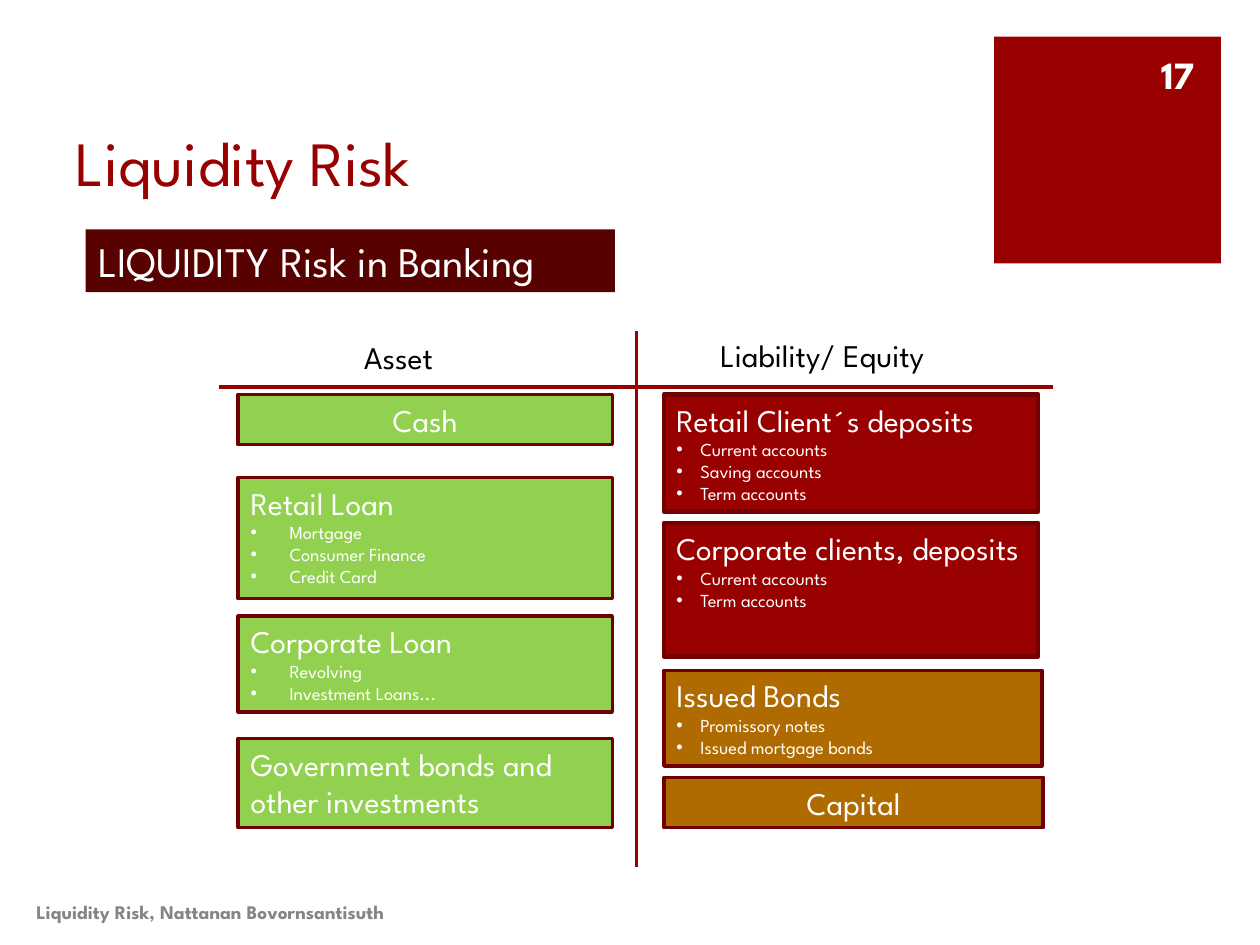
from lxml.etree import SubElement
from pptx import Presentation
from pptx.dml.color import RGBColor
from pptx.enum.shapes import MSO_CONNECTOR, MSO_SHAPE
from pptx.enum.text import MSO_ANCHOR, PP_ALIGN
from pptx.oxml.ns import qn
from pptx.util import Inches, Pt

HUES = {
    "red": "990000", "dark": "580101", "edge": "710000", "rim": "730000",
    "green": "92D050", "brown": "B06B00", "white": "FFFFFF",
    "black": "000000", "grey": "858585",
}
LEFT, RIGHT, MID = PP_ALIGN.LEFT, PP_ALIGN.RIGHT, PP_ALIGN.CENTER


class Deck:
    """Holds the style and current slide; lengths are cells of a 100 by 75 grid."""

    font = "League Spartan"

    def __init__(self):
        self.show = Presentation()
        self.cell = Inches(0.1)
        self.show.slide_width = self.size(100)
        self.show.slide_height = self.size(75)
        self.slide = self.show.slides.add_slide(self.show.slide_layouts[5])

    def size(self, cells):
        return round(cells * self.cell)

    def place(self, spot):
        return [self.size(n) for n in spot]

    def hue(self, name):
        return RGBColor.from_string(HUES[name])

    def words(self, par, text, size, hue, bold=False, align=LEFT):
        par.alignment = align
        run = par.add_run()
        run.text = text
        form = {"name": self.font, "size": Pt(size), "bold": bold}
        for key, value in form.items():
            setattr(run.font, key, value)
        run.font.color.rgb = self.hue(hue)

    def frame(self, shape, anchor=MSO_ANCHOR.TOP):
        form = {"word_wrap": True, "vertical_anchor": anchor}
        for key, value in form.items():
            setattr(shape.text_frame, key, value)
        return shape.text_frame

    def title(self, spot, text):
        shape = self.slide.shapes.title
        form = dict(zip(("left", "top", "width", "height"), self.place(spot)))
        for key, value in form.items():
            setattr(shape, key, value)
        frame = self.frame(shape, MSO_ANCHOR.BOTTOM)
        self.words(frame.paragraphs[0], text, 36, "red")

    def label(self, spot, text, size, hue, anchor=MSO_ANCHOR.TOP, **form):
        shape = self.slide.shapes.add_textbox(*self.place(spot))
        par = self.frame(shape, anchor).paragraphs[0]
        self.words(par, text, size, hue, **form)

    def block(self, spot, fill, edge=None, width=2):
        shape = self.slide.shapes.add_shape(MSO_SHAPE.RECTANGLE, *self.place(spot))
        shape.shadow.inherit = False
        shape.fill.solid()
        shape.fill.fore_color.rgb = self.hue(fill)
        if edge:
            shape.line.color.rgb = self.hue(edge)
            shape.line.width = Pt(width)
        else:
            shape.line.fill.background()
        return shape

    def bullet(self, par, indent):
        props = par._p.get_or_add_pPr()
        props.set("marL", str(self.size(indent)))
        props.set("indent", str(-self.size(indent)))
        SubElement(props, qn("a:buFont"), typeface="Arial")
        SubElement(props, qn("a:buChar"), char="•")

    def card(self, spot, look, head, items=(), indent=0, size=18, align=LEFT):
        """Draw a filled box with a heading and an optional bullet list."""
        frame = self.frame(self.block(spot, *look))
        self.words(frame.paragraphs[0], head, size, "white", align=align)
        for item in items:
            par = frame.add_paragraph()
            self.words(par, item, 10.5, "white")
            self.bullet(par, indent)

    def rule(self, *ends):
        line = self.slide.shapes.add_connector(
            MSO_CONNECTOR.STRAIGHT, *self.place(ends))
        line.line.color.rgb = self.hue("red")
        line.line.width = Pt(2)
        SubElement(line._element.spPr, qn("a:effectLst"))


def main():
    deck = Deck()
    deck.block((78.9, 2.9, 18, 18), "red")
    deck.title((5, 3.8, 71.2, 12.5), "Liquidity Risk")
    deck.label((1.9, 70.4, 65.7, 4), "Liquidity Risk, Nattanan Bovornsantisuth",
               11, "grey", MSO_ANCHOR.MIDDLE, bold=True)
    deck.label((90.3, 3.9, 5.5, 4), "17", 22, "white", MSO_ANCHOR.MIDDLE,
               bold=True, align=RIGHT)
    deck.card((6.8, 18.2, 42, 5), ("dark",), "LIQUIDITY Risk in Banking", size=24)

    deck.rule(17.4, 30.7, 83.6, 30.7)
    deck.rule(50.5, 26.3, 50.5, 68.8)
    deck.label((27.9, 26.3, 8.4, 4), "Asset", 18, "black")
    deck.label((56.2, 26.2, 20, 4), "Liability/ Equity", 18, "black")

    green, red = ("green", "edge"), ("red", "rim", 2.5)
    brown = ("brown", "edge")
    assets = [
        (31.3, 4, 29.7, green, "Cash", (), MID),
        (37.9, 9.6, 29.7, green, "Retail Loan",
         ("Mortgage", "Consumer Finance", "Credit Card"), LEFT),
        (48.9, 7.6, 29.7, green, "Corporate Loan",
         ("Revolving", "Investment Loans..."), LEFT),
        (58.6, 7.1, 29.7, green, "Government bonds and other investments", (), LEFT),
    ]
    debts = [
        (31.3, 9.3, 29.7, red, "Retail Client´s deposits",
         ("Current accounts", "Saving accounts", "Term accounts"), LEFT),
        (41.5, 10.6, 29.7, red, "Corporate clients, deposits",
         ("Current accounts", "Term accounts"), LEFT),
        (53.2, 7.6, 30, brown, "Issued Bonds",
         ("Promissory notes", "Issued mortgage bonds"), LEFT),
        (61.7, 4, 30.1, brown, "Capital", (), MID),
    ]
    for left, indent, cards in ((18.9, 3.1, assets), (52.7, 1.9, debts)):
        for top, high, wide, look, head, items, align in cards:
            deck.card((left, top, wide, high), look, head, items, indent, align=align)

    deck.show.save("out.pptx")


if __name__ == "__main__":
    main()
